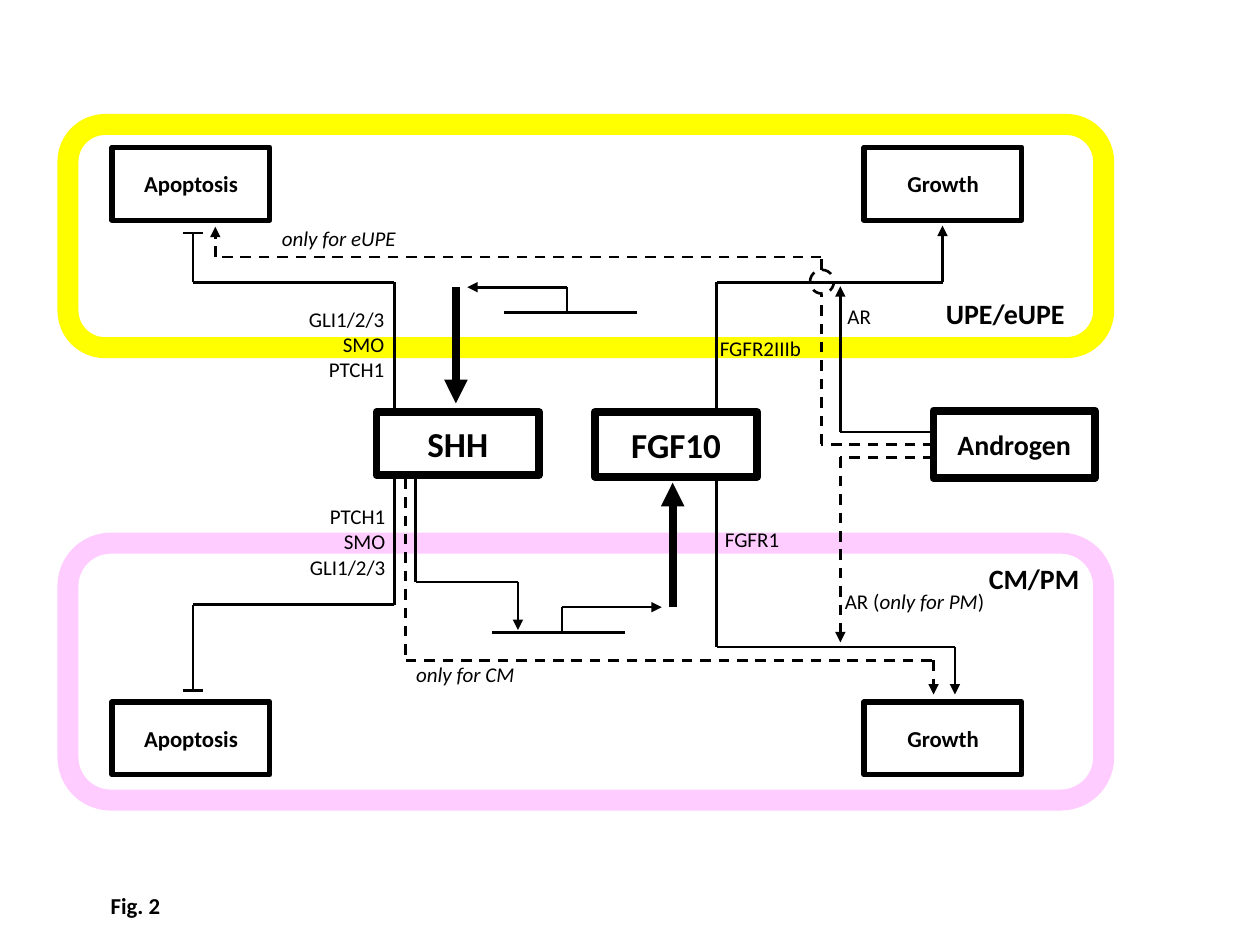
import pptx
import pptx.dml.color
import pptx.enum.dml
import pptx.enum.shapes
import pptx.enum.text
import pptx.oxml
import pptx.oxml.ns
import pptx.util
from pptx.util import Cm

BLACK = pptx.dml.color.RGBColor(0x00, 0x00, 0x00)
WHITE = pptx.dml.color.RGBColor(0xFF, 0xFF, 0xFF)
YELLOW = pptx.dml.color.RGBColor(0xFF, 0xFF, 0x00)
PINK = pptx.dml.color.RGBColor(0xFF, 0xCC, 0xFF)

SHAPE = pptx.enum.shapes.MSO_SHAPE
ALIGN = pptx.enum.text.PP_ALIGN
ANCHOR = pptx.enum.text.MSO_ANCHOR
AUTO_SIZE = pptx.enum.text.MSO_AUTO_SIZE
DASH = pptx.enum.dml.MSO_LINE.DASH


class Diagram:
    """Holds the style and the current slide; all positions are in cm."""

    font = "Calibri"
    thin, thick = 1.5, 4.5

    def __init__(self, slide):
        self.slide = slide

    def style_line(self, line, color, width, dashed=False):
        line.color.rgb = color
        line.width = pptx.util.Pt(width)
        if dashed:
            line.dash_style = DASH

    def style_run(self, r, size, bold=False, italic=False):
        r.font.name = self.font
        r.font.size = pptx.util.Pt(size)
        r.font.color.rgb = BLACK
        r.font.bold = bold
        r.font.italic = italic

    def outline(self, kind, x, y, w, h, color, width, dashed=False):
        sp = self.slide.shapes.add_shape(kind, Cm(x), Cm(y), Cm(w), Cm(h))
        sp.shadow.inherit = False
        sp.fill.background()
        self.style_line(sp.line, color, width, dashed)
        return sp

    def box(self, text, x, y, w, h, size, width):
        sp = self.outline(SHAPE.RECTANGLE, x, y, w, h, BLACK, width)
        sp.fill.solid()
        sp.fill.fore_color.rgb = WHITE
        tf = sp.text_frame
        tf.vertical_anchor = ANCHOR.MIDDLE
        tf.text = text
        p = tf.paragraphs[0]
        p.alignment = ALIGN.CENTER
        self.style_run(p.runs[0], size, bold=True)
        return sp

    def heading(self, text, x, y, w, h, size, align=ALIGN.CENTER, anchor=ANCHOR.MIDDLE):
        tf = self.slide.shapes.add_textbox(Cm(x), Cm(y), Cm(w), Cm(h)).text_frame
        tf.word_wrap = True
        tf.vertical_anchor = anchor
        tf.text = text
        p = tf.paragraphs[0]
        p.alignment = align
        self.style_run(p.runs[0], size, bold=True)

    def label(self, lines, x, y, w, h=0.76):
        """Right-aligned lines; parts between asterisks are italic."""
        tf = self.slide.shapes.add_textbox(Cm(x), Cm(y), Cm(w), Cm(h)).text_frame
        tf.word_wrap = False
        tf.auto_size = AUTO_SIZE.SHAPE_TO_FIT_TEXT
        for i, line in enumerate(lines):
            p = tf.paragraphs[0] if i == 0 else tf.add_paragraph()
            p.alignment = ALIGN.RIGHT
            for j, part in enumerate(line.split("*")):
                if part:
                    r = p.add_run()
                    r.text = part
                    self.style_run(r, 12, italic=j % 2 == 1)

    def route(self, *points, width=thin, dashed=False, arrow=False, source=None):
        """Straight segments through the points, with an optional end arrow."""
        for i, (start, end) in enumerate(zip(points, points[1:])):
            c = self.slide.shapes.add_connector(
                pptx.enum.shapes.MSO_CONNECTOR.STRAIGHT, *map(Cm, start + end))
            self.style_line(c.line, BLACK, width, dashed)
            if arrow and i == len(points) - 2:
                ln = c.line._get_or_add_ln()
                tail = pptx.oxml.ns.qn("a:tailEnd")
                ln.append(ln.makeelement(tail, {"type": "triangle"}))
            sp_pr = c._element.spPr
            sp_pr.append(sp_pr.makeelement(pptx.oxml.ns.qn("a:effectLst"), {}))
            if source is not None and i == 0:
                c.begin_connect(source, 1)


def main():
    prs = pptx.Presentation()
    prs.slide_width, prs.slide_height = Cm(25.4), Cm(19.05)
    d = Diagram(prs.slides.add_slide(prs.slide_layouts[6]))

    # Tissue compartments
    d.outline(SHAPE.ROUNDED_RECTANGLE, 1.37, 2.51, 20.88, 4.5, YELLOW, 12)
    d.outline(SHAPE.ROUNDED_RECTANGLE, 1.37, 10.95, 20.88, 5.18, PINK, 12)
    d.heading("UPE/eUPE", 18.82, 5.59, 3.73, 1.47, 16, ALIGN.LEFT)
    d.heading("CM/PM", 19.56, 10.92, 2.57, 1.47, 16)

    # Outcomes in both compartments
    for y in (2.97, 14.15):
        d.box("Apoptosis", 2.26, y, 3.18, 1.47, 13, 3)
        d.box("Growth", 17.42, y, 3.18, 1.47, 13, 3)

    # Signals
    d.box("SHH", 7.59, 8.31, 3.28, 1.27, 20, d.thick)
    d.box("FGF10", 11.99, 8.31, 3.28, 1.3, 20, d.thick)
    androgen = d.box("Androgen", 18.82, 8.28, 3.25, 1.36, 16, d.thick)

    # SHH inhibits apoptosis
    for start, turn, end in ((8.23, 5.69, 4.7), (9.63, 12.19, 13.92)):
        d.route((7.95, start), (7.95, turn), (3.89, turn), (3.89, end))
        d.route((3.68, end), (4.09, end))

    # SHH promotes growth in CM
    d.route((8.18, 9.65), (8.18, 13.31), (18.82, 13.31), (18.82, 14),
            dashed=True, arrow=True)

    # FGF10 promotes growth
    for x, start, turn, end in ((19, 8.23, 5.69, 4.55), (19.25, 9.65, 13.04, 14)):
        d.route((14.45, start), (14.45, turn), (x, turn), (x, end), arrow=True)

    # Gene expression: baseline, promoter arrow, thick arrow to the signal
    d.route((8.38, 9.63), (8.38, 11.73), (10.44, 11.73), (10.44, 12.7), arrow=True)
    for left, base, x, tip, signal_x, top, end in (
            (10.16, 6.3, 11.43, 9.42, 9.19, 5.79, 8.13),
            (9.91, 12.75, 11.33, 13.34, 13.56, 12.24, 9.73)):
        d.route((left, base), (left + 2.69, base))
        d.route((x, base), (x, top), (tip, top), arrow=True)
        d.route((signal_x, top), (signal_x, end), width=d.thick, arrow=True)

    # Androgen acts on the growth and apoptosis pathways
    d.route((18.82, 8.71), (16.94, 8.71), (16.94, 5.77), arrow=True)
    d.route((18.82, 9.22), (16.94, 9.22), (16.94, 12.95), dashed=True, arrow=True)
    d.route((18.82, 8.96), (16.56, 8.96), (16.56, 5.92), dashed=True, source=androgen)
    d.outline(SHAPE.OVAL, 16.33, 5.44, 0.48, 0.48, BLACK, d.thin, dashed=True)
    d.route((16.56, 5.44), (16.56, 5.18), (4.34, 5.18), (4.34, 4.57),
            dashed=True, arrow=True)

    # Pathway labels
    cascade = ["PTCH1", "SMO", "GLI1/2/3"]
    d.label(cascade[::-1], 5.92, 6.05, 2.08, 1.8)
    d.label(cascade, 5.94, 10.03, 2.08, 1.8)
    d.label(["FGFR2IIIb"], 14.22, 6.63, 2.18)
    d.label(["FGFR1"], 14.33, 10.49, 1.63)
    d.label(["AR"], 16.79, 5.99, 1.02)
    d.label(["AR (*only for PM*)"], 16.71, 11.73, 3.38)
    d.label(["*only for eUPE*"], 5.31, 4.42, 2.92)
    d.label(["*only for CM*"], 8, 13.21, 2.62)

    # Caption
    d.heading("Fig. 2 ", 1.42, 17.86, 2.72, 0.81, 13, anchor=ANCHOR.TOP)

    prs.save("out.pptx")


if __name__ == "__main__":
    main()
